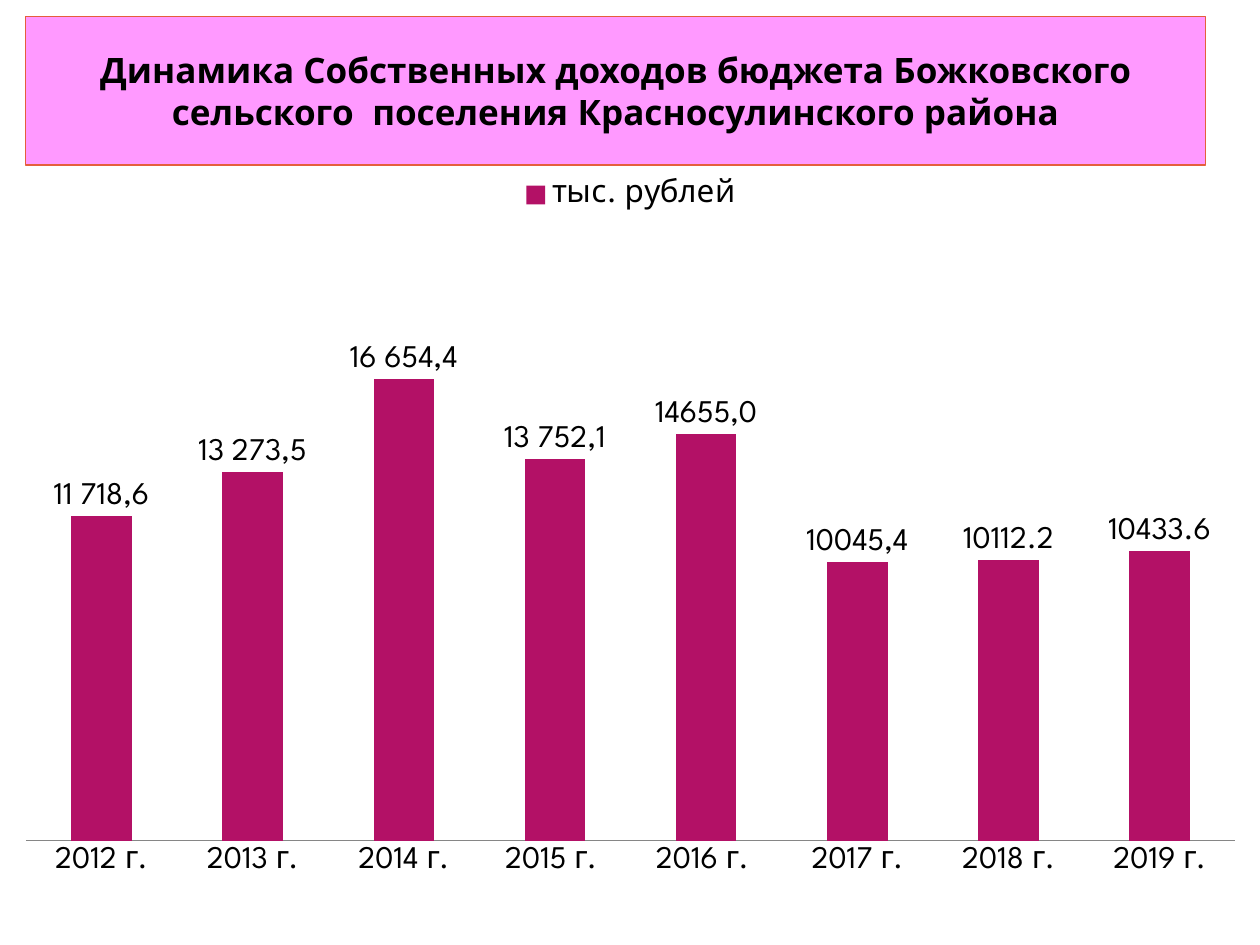
"""Build a slide with a column chart of the settlement's own budget revenue by year."""
from lxml import etree
from pptx import Presentation
from pptx.chart.data import CategoryChartData
from pptx.dml.color import RGBColor
from pptx.enum.chart import XL_CHART_TYPE as ChartType, XL_LABEL_POSITION as LabelPosition
from pptx.enum.chart import XL_LEGEND_POSITION as LegendPosition, XL_TICK_MARK as TickMark
from pptx.enum.text import MSO_ANCHOR, PP_ALIGN
from pptx.oxml.ns import qn
from pptx.util import Inches, Pt

FONT = "League Spartan"


def paint(color_format, hex_color):
    color_format.rgb = RGBColor.from_string(hex_color)


def style(font, size, bold=False):
    font.name = FONT
    font.size = Pt(size)
    font.bold = bold
    paint(font.color, "000000")


prs = Presentation()
prs.slide_width = Inches(10)
prs.slide_height = Inches(7.5)
slide = prs.slides.add_slide(prs.slide_layouts[5])

title = slide.shapes.title
title.left, title.top = Inches(0.2), Inches(0.13)
title.width, title.height = Inches(9.37), Inches(1.18)
title.fill.solid()
paint(title.fill.fore_color, "FF99FF")
paint(title.line.color, "E45F3C")
title.line.width = Pt(0.75)
title.text_frame.text = (
    "Динамика Собственных доходов бюджета Божковского "
    "сельского  поселения Красносулинского района"
)
title.text_frame.vertical_anchor = MSO_ANCHOR.MIDDLE
heading = title.text_frame.paragraphs[0]
heading.alignment = PP_ALIGN.CENTER
style(heading.font, 20, bold=True)

revenue = [
    ("2012 г.", 11718.6, "11 718,6"),
    ("2013 г.", 13273.5, "13 273,5"),
    ("2014 г.", 16654.4, "16 654,4"),
    ("2015 г. ", 13752.1, "13 752,1"),
    ("2016 г. ", 14655, "14655,0"),
    ("2017 г.", 10045.4, "10045,4"),
    ("2018 г.", 10112.2, None),
    ("2019 г.", 10433.6, None),
]
years, amounts, captions = zip(*revenue)
revenue_data = CategoryChartData()
revenue_data.categories = years
revenue_data.add_series("тыс. рублей", amounts)
chart = slide.shapes.add_chart(
    ChartType.COLUMN_CLUSTERED, Inches(0.2), Inches(1.31), Inches(9.61), Inches(5.83), revenue_data
).chart
style(chart.font, 18)
chart.has_title = False
chart.has_legend = True
chart.legend.position = LegendPosition.TOP
chart.legend.include_in_layout = False

year_axis = chart.category_axis
year_axis.major_tick_mark = TickMark.NONE
year_axis.minor_tick_mark = TickMark.NONE
paint(year_axis.format.line.color, "868686")
amount_axis = chart.value_axis
amount_axis.visible = False
amount_axis.has_major_gridlines = False
amount_axis.minimum_scale = 0
amount_axis.maximum_scale = 18000

plot = chart.plots[0]
plot.gap_width = 150
plot.vary_by_categories = False
columns = plot.series[0]
columns.format.fill.solid()
paint(columns.format.fill.fore_color, "B31166")
labels = columns.data_labels
labels.show_value = True
labels.number_format = "General"
labels.number_format_is_linked = False
labels.position = LabelPosition.OUTSIDE_END
style(labels.font, 18)
for index, caption in enumerate(captions):
    if caption:
        label = columns.points[index].data_label
        label.text_frame.text = caption
        style(label.text_frame.paragraphs[0].font, 18)
        label.position = LabelPosition.OUTSIDE_END

plot_area = chart.element.find(".//" + qn("c:plotArea"))
layout = plot_area.find(qn("c:layout"))
if layout is None:
    layout = etree.Element(qn("c:layout"))
    plot_area.insert(0, layout)
manual = etree.SubElement(layout, qn("c:manualLayout"))
for tag, setting in [
    ("layoutTarget", "inner"), ("xMode", "edge"), ("yMode", "edge"),
    ("x", "0"), ("y", "0.24"), ("w", "1"), ("h", "0.68"),
]:
    etree.SubElement(manual, qn("c:" + tag)).set("val", setting)

prs.save("out.pptx")
